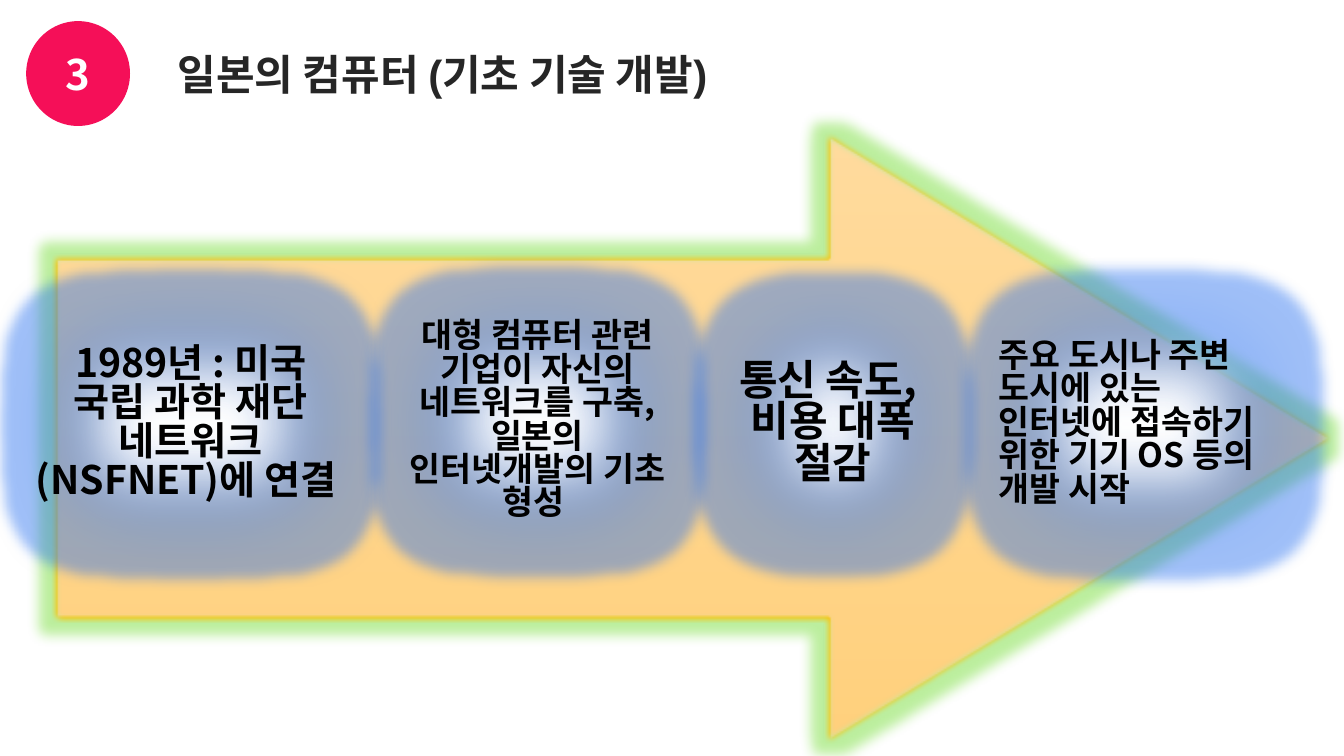
import pptx
import pptx.util
import pptx.dml.color
import pptx.enum.shapes
import pptx.enum.text
import pptx.oxml
import pptx.oxml.ns
from dataclasses import dataclass

Inches = pptx.util.Inches
Kind = pptx.enum.shapes.MSO_SHAPE
Align = pptx.enum.text.PP_ALIGN
Anchor = pptx.enum.text.MSO_ANCHOR


@dataclass
class Theme:
    font: str = "Noto Sans CJK KR"
    head: str = "Arial"
    white: str = "FFFFFF"
    black: str = "000000"
    dark: str = "262626"
    pink: str = "F50F58"
    gold: str = "FFC000"
    pale: str = "FFDB9E"
    amber: str = "FFD07C"
    green: str = "70AD47"
    blue: str = "5B9BD5"
    orange: str = "ED7D31"
    lime: str = "6BDB28"
    azure: str = "2C73F0"
    big: int = 30
    mid: int = 28
    small: int = 24


class Deck:
    def __init__(self, theme):
        self.theme = theme
        self.file = pptx.Presentation()
        self.file.slide_width = Inches(13.33)
        self.file.slide_height = Inches(7.5)
        self.slide = self.file.slides.add_slide(self.file.slide_layouts[6])

    def tint(self, code):
        return pptx.dml.color.RGBColor.from_string(code)

    def shape(self, kind, box, fill=None, line=None, width=0):
        item = self.slide.shapes.add_shape(kind, *map(Inches, box))
        item.shadow.inherit = False
        if fill:
            item.fill.solid()
            item.fill.fore_color.rgb = self.tint(fill)
        if line:
            item.line.color.rgb = self.tint(line)
            item.line.width = pptx.util.Pt(width)
        else:
            item.line.fill.background()
        return item

    def glow(self, item, code, size, soft):
        old = item._element.spPr.find(pptx.oxml.ns.qn("a:effectLst"))
        new = pptx.oxml.parse_xml(
            f'<a:effectLst {pptx.oxml.ns.nsdecls("a")}>'
            f'<a:glow rad="{pptx.util.Pt(size)}"><a:srgbClr val="{code}">'
            f'<a:alpha val="45000"/></a:srgbClr></a:glow>'
            f'<a:softEdge rad="{pptx.util.Pt(soft)}"/></a:effectLst>')
        old.getparent().replace(old, new)

    def label(self, item, lines, size, color, font=None, align=Align.CENTER, pitch=None):
        frame = item.text_frame
        frame.vertical_anchor = Anchor.MIDDLE
        for spot, text in enumerate(lines):
            para = frame.add_paragraph() if spot else frame.paragraphs[0]
            para.alignment = align
            if pitch:
                para.line_spacing = pitch
            run = para.add_run()
            run.text = text
            run.font.name = font or self.theme.font
            run.font.size = pptx.util.Pt(size)
            run.font.bold = True
            run.font.color.rgb = self.tint(color)

    def arrow(self, box):
        item = self.shape(Kind.RIGHT_ARROW, box, line=self.theme.gold, width=4.5)
        item.adjustments[0] = 0.593
        item.adjustments[1] = 0.83
        item.fill.gradient()
        item.fill.gradient_angle = 270
        for stop, code in zip(item.fill.gradient_stops, (self.theme.pale, self.theme.amber)):
            stop.color.rgb = self.tint(code)
        self.glow(item, self.theme.lime, 18, 5)

    def badge(self, box, text):
        item = self.shape(Kind.OVAL, box, self.theme.pink)
        self.label(item, [text], self.theme.big, self.theme.white)

    def title(self, box, text):
        item = self.slide.shapes.add_textbox(*map(Inches, box))
        item.text_frame.word_wrap = False
        self.label(item, [text], self.theme.big, self.theme.dark, self.theme.head)

    def step(self, box, lines, size, line, width, align=Align.CENTER):
        item = self.shape(Kind.RECTANGLE, box, self.theme.white, line, width)
        self.glow(item, self.theme.azure, 18, 50)
        self.label(item, lines, size, self.theme.black, align=align, pitch=0.83)


def main():
    look = Theme()
    deck = Deck(look)
    deck.arrow((0.54, 1.32, 12.68, 6.05))
    deck.badge((0.26, 0.21, 1.03, 1.04), "3")
    deck.title((1.3, 0.43, 6.29, 0.61), "일본의 컴퓨터 (기초 기술 개발) ")
    steps = [
        (0.25, 2.91, 3.28, ["1989년 : 미국 국립 과학 재단 네트워크 (NSFNET)에 연결 "],
         look.mid, look.green, 3, Align.CENTER),
        (3.92, 2.88, 2.82, ["대형 컴퓨터 관련 기업이 자신의 네트워크를 구축, 일본의 인터넷개발의 기초 형성 "],
         look.small, look.green, 3, Align.CENTER),
        (7.11, 2.91, 2.3, ["통신 속도, ", "비용 대폭 절감"],
         look.big, look.blue, 4.5, Align.CENTER),
        (9.81, 2.91, 3.06, ["주요 도시나 주변 도시에 있는 인터넷에 접속하기 위한 기기 OS 등의 개발 시작"],
         look.small, look.orange, 4.5, Align.LEFT),
    ]
    for left, top, wide, *rest in steps:
        deck.step((left, top, wide, 2.6), *rest)
    deck.file.save("out.pptx")


if __name__ == "__main__":
    main()
